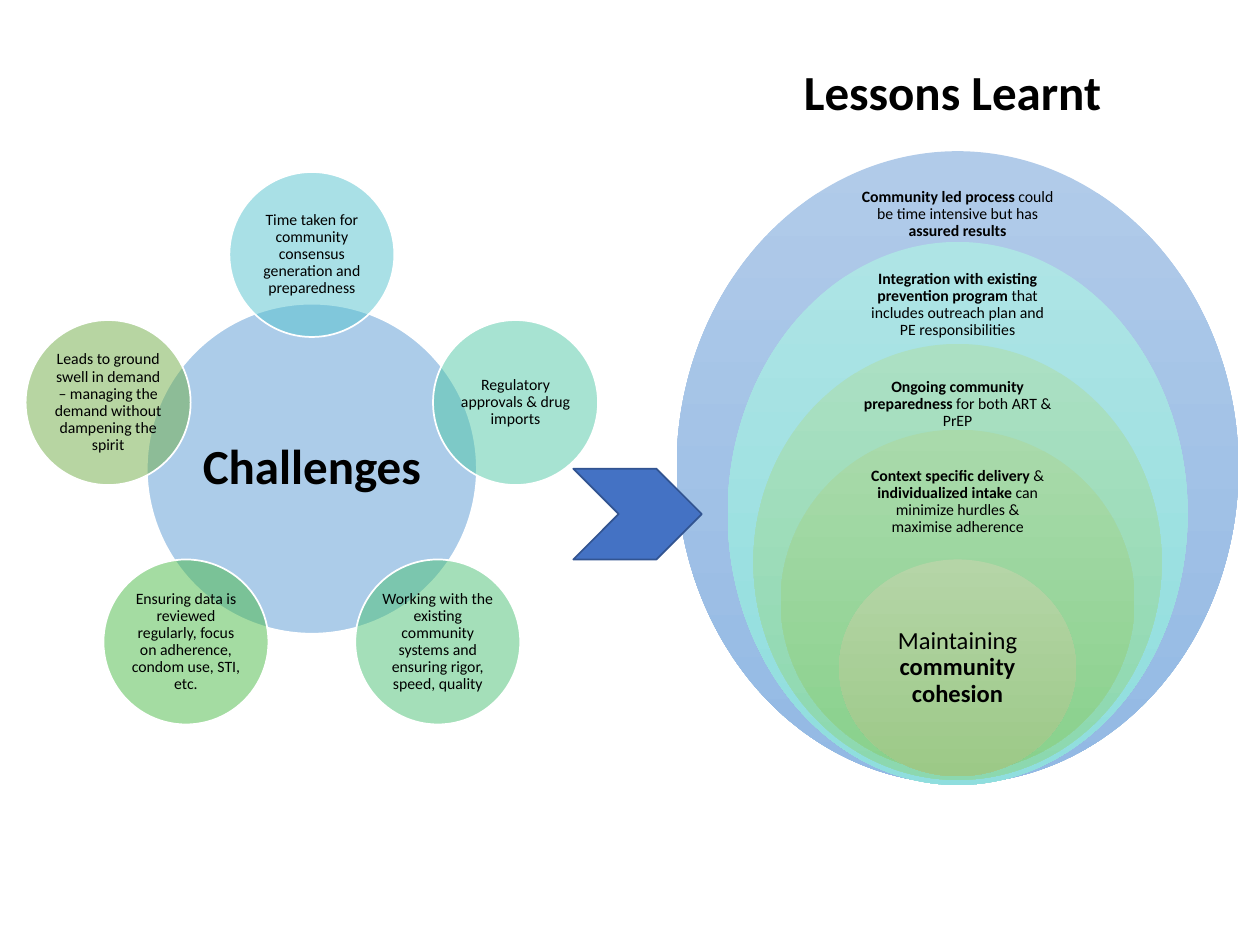
"""Build a slide of challenges around a hub that lead to nested lessons."""
import math
import typing

import lxml.etree
import pptx
import pptx.dml.color
import pptx.enum.shapes
import pptx.enum.text
import pptx.oxml.ns
import pptx.util

COLS, ROWS = 100, 75
CELL = pptx.util.Inches(0.1)
KIND = pptx.enum.shapes.MSO_SHAPE
ALIGN = pptx.enum.text.PP_ALIGN
MID = pptx.enum.text.MSO_ANCHOR.MIDDLE


class Box(typing.NamedTuple):
    """Left, top, width and height in grid cells."""
    left: float
    top: float
    wide: float
    high: float


class Phrase(typing.NamedTuple):
    """A piece of text, bold or plain."""
    text: str
    bold: bool = False


class Issue(typing.NamedTuple):
    """A challenge on the ring."""
    text: str
    fill: str


class Lesson(typing.NamedTuple):
    """A nested oval and its label, each as top, width and height."""
    oval: tuple[float, float, float]
    label: tuple[float, float, float]
    fade: tuple[str, str]
    words: list[Phrase]
    size: int = 9
    inset: float = 0.07


HUB = (24.75, 37.2)
HUB_SIZE, NODE_SIZE, RING = 26.2, 13.1, 17
AXIS = 76

ISSUES = [
    Issue("Time taken for community consensus generation and preparedness", "55C3CF"),
    Issue("Regulatory approvals & drug imports", "50C8A7"),
    Issue("Working with the existing community systems and ensuring rigor, speed, quality", "4BC174"),
    Issue("Ensuring data is reviewed regularly, focus on adherence, condom use, STI, etc.", "4ABA46"),
    Issue("Leads to ground swell in demand – managing the demand without dampening the spirit", "70AD47"),
]

LESSONS = [
    Lesson((12, 44.6, 50.2), (14.5, 16.7, 5), ("B1CBE9", "93B9E4"),
           [Phrase("Community led process ", True), Phrase("could be time intensive but has "),
            Phrase("assured results", True)]),
    Lesson((19.2, 36.5, 43.1), (21.7, 15.7, 5), ("AEE4E5", "8FDEDE"),
           [Phrase("Integration with existing prevention program ", True),
            Phrase("that includes outreach plan and PE responsibilities")]),
    Lesson((27.3, 32.4, 34.6), (29.7, 16.8, 4.8), ("ABE0C3", "8CD8AF"),
           [Phrase("Ongoing community preparedness", True), Phrase(" for both ART & PrEP")]),
    Lesson((34.1, 28.1, 27.2), (37.4, 15.2, 4.9), ("A9DAAB", "89D18C"),
           [Phrase("Context specific delivery ", True), Phrase("& "),
            Phrase("individualized intake", True),
            Phrase(" can minimize hurdles & maximise adherence")]),
    Lesson((44.4, 18.8, 17.2), (48.7, 13.3, 8.6), ("B5D5A7", "9CC987"),
           [Phrase("Maintaining "), Phrase("community cohesion", True)], 14, 0.11),
]


def hue(code: str) -> pptx.dml.color.RGBColor:
    """Turn a hex string into a colour."""
    return pptx.dml.color.RGBColor.from_string(code)


def span(box: Box) -> list[int]:
    """Turn grid cells into slide lengths."""
    return [round(side * CELL) for side in box]


def mid_box(x: float, y: float, size: float) -> Box:
    """Return a square box around a centre."""
    return Box(x - size / 2, y - size / 2, size, size)


def axis_box(top: float, wide: float, high: float) -> Box:
    """Return a box centred on the lessons axis."""
    return Box(AXIS - wide / 2, top, wide, high)


def add_form(slide, kind, box: Box):
    """Add a preset shape without a shadow."""
    form = slide.shapes.add_shape(kind, *span(box))
    form.shadow.inherit = False
    return form


def paint(form, fill: str, line: str) -> None:
    """Give a shape a solid fill and a thin line."""
    form.fill.solid()
    form.fill.fore_color.rgb = hue(fill)
    form.line.color.rgb = hue(line)
    form.line.width = pptx.util.Pt(1)


def fade_half(form) -> None:
    """Make a solid fill half transparent."""
    tint = form._element.spPr.xpath("./a:solidFill/a:srgbClr")[0]
    lxml.etree.SubElement(tint, pptx.oxml.ns.qn("a:alpha"), val="50000")


def style(font, size: int, bold: bool) -> None:
    """Set the face, size, weight and colour of a font."""
    font.name = "Calibri"
    font.size = pptx.util.Pt(size)
    font.bold = bold
    font.color.rgb = hue("000000")


def write(form, words: list[Phrase], size: int, inset: float) -> None:
    """Write one centred paragraph of bold and plain phrases."""
    frame = form.text_frame
    frame.word_wrap = True
    frame.vertical_anchor = MID
    frame.margin_left = frame.margin_right = pptx.util.Inches(inset)
    frame.margin_top = frame.margin_bottom = pptx.util.Inches(inset)
    para = frame.paragraphs[0]
    para.alignment = ALIGN.CENTER
    para.line_spacing = 0.9
    for phrase in words:
        run = para.add_run()
        run.text = phrase.text
        style(run.font, size, phrase.bold)


def add_disc(slide, box: Box, fill: str, phrase: Phrase, size: int, inset: float) -> None:
    """Add a see-through circle with its text."""
    disc = add_form(slide, KIND.OVAL, box)
    paint(disc, fill, "FFFFFF")
    fade_half(disc)
    write(disc, [phrase], size, inset)


def add_ring(slide) -> None:
    """Add the hub and its evenly spaced challenges."""
    add_disc(slide, mid_box(*HUB, HUB_SIZE), "5B9BD5", Phrase("Challenges", True), 28, 0.04)
    for step, issue in enumerate(ISSUES):
        turn = math.tau * step / len(ISSUES)
        x = HUB[0] + RING * math.sin(turn)
        y = HUB[1] - RING * math.cos(turn)
        add_disc(slide, mid_box(x, y, NODE_SIZE), issue.fill, Phrase(issue.text), 9, 0.01)


def add_lesson(slide, item: Lesson) -> None:
    """Add one graded oval and its label."""
    oval = add_form(slide, KIND.OVAL, axis_box(*item.oval))
    oval.fill.gradient()
    oval.fill.gradient_angle = 270
    for stop, code in zip(oval.fill.gradient_stops, item.fade):
        stop.color.rgb = hue(code)
    oval.line.fill.background()
    label = slide.shapes.add_textbox(*span(axis_box(*item.label)))
    write(label, item.words, item.size, item.inset)


def set_title(slide, text: str, box: Box) -> None:
    """Move and format the title placeholder."""
    title = slide.shapes.title
    title.left, title.top, title.width, title.height = span(box)
    frame = title.text_frame
    frame.text = text
    frame.word_wrap = True
    frame.auto_size = pptx.enum.text.MSO_AUTO_SIZE.NONE
    frame.vertical_anchor = MID
    para = frame.paragraphs[0]
    para.alignment = ALIGN.LEFT
    style(para.runs[0].font, 28, True)


def main() -> None:
    """Build and save the slide."""
    deck = pptx.Presentation()
    deck.slide_width, deck.slide_height = COLS * CELL, ROWS * CELL
    slide = deck.slides.add_slide(deck.slide_layouts[5])
    set_title(slide, "Lessons Learnt", Box(62.8, 4.4, 26.3, 5.7))
    add_ring(slide)
    for item in LESSONS:
        add_lesson(slide, item)
    arrow = add_form(slide, KIND.CHEVRON, Box(45.5, 37.2, 10.2, 7.2))
    paint(arrow, "4472C4", "325491")
    deck.save("out.pptx")


if __name__ == "__main__":
    main()
